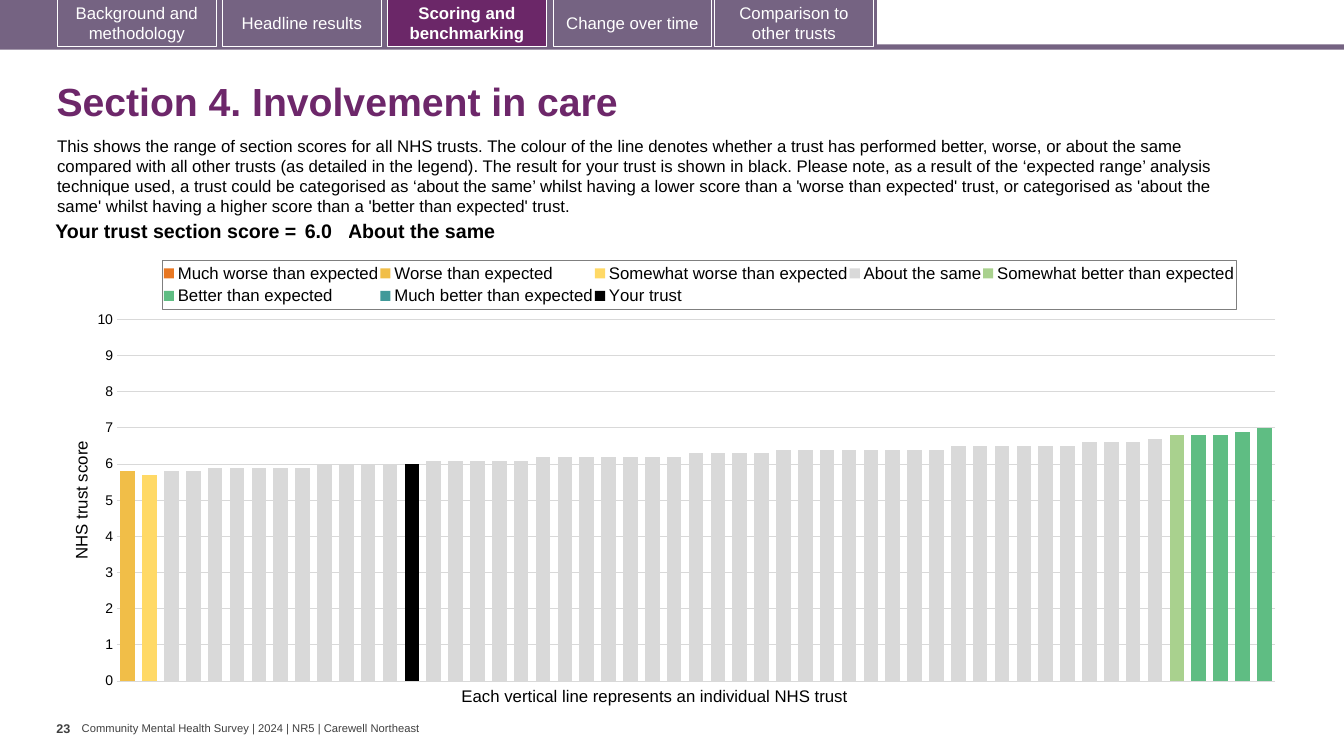
import copy

import pptx
import pptx.chart.data
import pptx.dml.color
import pptx.enum.chart
import pptx.enum.shapes
import pptx.enum.text
import pptx.oxml
import pptx.oxml.ns
import pptx.util

Cm, Pt = pptx.util.Cm, pptx.util.Pt
RGBColor = pptx.dml.color.RGBColor
Align = pptx.enum.text.PP_ALIGN
MIDDLE = pptx.enum.text.MSO_ANCHOR.MIDDLE
qn, nsdecls = pptx.oxml.ns.qn, pptx.oxml.ns.nsdecls

FONT = "Arial"
BLACK = RGBColor(0x00, 0x00, 0x00)
WHITE = RGBColor(0xFF, 0xFF, 0xFF)
DARK_GREY = RGBColor(0x40, 0x40, 0x40)
GRID_GREY = RGBColor(0xD9, 0xD9, 0xD9)
BAR_PURPLE = RGBColor(0x75, 0x63, 0x82)
ACTIVE_PURPLE = RGBColor(0x6B, 0x27, 0x68)
TITLE_PURPLE = RGBColor(0x6D, 0x27, 0x6A)

TABS = [("Background and methodology", 1.45), ("Headline results", 5.61),
        ("Scoring and benchmarking", 9.77), ("Change over time", 13.94),
        ("Comparison to other trusts", 18.01)]
ACTIVE_TAB = "Scoring and benchmarking"
INTRODUCTION = (
    "This shows the range of section scores for all NHS trusts. The colour of the line denotes whether a trust "
    "has performed better, worse, or about the same compared with all other trusts (as detailed in the legend). "
    "The result for your trust is shown in black. Please note, as a result of the ‘expected range’ analysis "
    "technique used, a trust could be categorised as ‘about the same’ whilst having a lower score than a 'worse "
    "than expected' trust, or categorised as 'about the same' whilst having a higher score than a 'better than "
    "expected' trust.")

TRUST_COUNT = 53
SAME_RUNS = [(5.8, 2), (5.9, 5), (6.0, 5), (6.1, 5), (6.2, 7),
             (6.3, 4), (6.4, 8), (6.5, 6), (6.6, 3), (6.7, 1)]
SAME_SCORES = [score for score, count in SAME_RUNS for _ in range(count)]
# Series name, colour, position of the first trust, scores
SERIES = [
    ("Much worse than expected", RGBColor(0xE8, 0x77, 0x22), 0, []),
    ("Worse than expected", RGBColor(0xF1, 0xBE, 0x48), 0, [5.8]),
    ("Somewhat worse than expected", RGBColor(0xFF, 0xD9, 0x66), 1, [5.7]),
    ("About the same", GRID_GREY, 2, SAME_SCORES),
    ("Somewhat better than expected", RGBColor(0xA9, 0xD1, 0x8E), 48, [6.8]),
    ("Better than expected", RGBColor(0x5F, 0xBD, 0x83), 49, [6.8, 6.8, 6.9, 7.0]),
    ("Much better than expected", RGBColor(0x41, 0x99, 0x99), 0, []),
    ("Your trust", BLACK, 13, [6.0]),
]


def format_font(font, size, color, bold=False):
    font.name, font.size, font.bold = FONT, Pt(size), bold
    font.color.rgb = color


def set_text(text_frame, text, size, color=BLACK, bold=False, alignment=Align.LEFT):
    text_frame.text = text
    paragraph = text_frame.paragraphs[0]
    paragraph.alignment = alignment
    format_font(paragraph.runs[0].font, size, color, bold)
    return paragraph


def add_rectangle(slide, left, top, width, height, fill):
    shape = slide.shapes.add_shape(
        pptx.enum.shapes.MSO_SHAPE.RECTANGLE, Cm(left), Cm(top), Cm(width), Cm(height))
    shape.shadow.inherit = False
    shape.fill.solid()
    shape.fill.fore_color.rgb = fill
    shape.line.fill.background()
    return shape


def add_tab(slide, label, left):
    active = label == ACTIVE_TAB
    shape = add_rectangle(slide, left, -0.03, 4, 1.2, ACTIVE_PURPLE if active else BAR_PURPLE)
    shape.line.color.rgb = WHITE
    shape.line.width = Pt(0.75)
    shape.text_frame.word_wrap = True
    shape.text_frame.vertical_anchor = MIDDLE
    set_text(shape.text_frame, label, 12, WHITE, active, Align.CENTER)


def add_text(slide, text, left, top, width, height, size, color=BLACK, bold=False, wrap=False, side=0.25, edge=0.13):
    frame = slide.shapes.add_textbox(Cm(left), Cm(top), Cm(width), Cm(height)).text_frame
    frame.word_wrap = wrap
    frame.margin_left = frame.margin_right = Cm(side)
    frame.margin_top = frame.margin_bottom = Cm(edge)
    set_text(frame, text, size, color, bold)
    return frame


def format_title(title, text):
    title.left, title.top, title.width, title.height = Cm(1.17), Cm(1.7), Cm(31.72), Cm(1.83)
    title.text_frame.vertical_anchor = MIDDLE
    set_text(title.text_frame, text, 28, TITLE_PURPLE, True).line_spacing = 0.9


def add_score_table(slide):
    # Text, column width, side margin, alignment
    columns = [("Your trust section score =", 6.68, 0.1, Align.RIGHT),
               ("6.0", 1.19, 0.1, Align.LEFT), ("About the same", 21.82, 0, Align.LEFT)]
    table = slide.shapes.add_table(1, 3, Cm(0.9), Cm(5.46), Cm(29.69), Cm(0.79)).table
    table.first_row = table.horz_banding = False
    for column, cell, (text, width, margin, alignment) in zip(table.columns, table.rows[0].cells, columns):
        column.width = Cm(width)
        cell.fill.background()
        cell.margin_left = cell.margin_right = Cm(margin)
        cell.margin_top = cell.margin_bottom = Cm(0.1)
        set_text(cell.text_frame, text, 14, BLACK, True, alignment)


def set_layout(parent, position, left, top, width, height, target=""):
    """Fix the place of a chart part, in fractions of the chart."""
    for layout in parent.findall(qn("c:layout")):
        parent.remove(layout)
    parent.insert(position, pptx.oxml.parse_xml(
        f'<c:layout {nsdecls("c")}><c:manualLayout>{target}<c:xMode val="edge"/><c:yMode val="edge"/>'
        f'<c:x val="{left}"/><c:y val="{top}"/><c:w val="{width}"/><c:h val="{height}"/>'
        '</c:manualLayout></c:layout>'))


def format_legend(chart):
    chart.has_legend = True
    legend = chart.legend
    legend.position = pptx.enum.chart.XL_LEGEND_POSITION.TOP
    legend.include_in_layout = False
    format_font(legend.font, 12, BLACK)
    set_layout(legend._element, 1, 0.077, 0.025, 0.877, 0.11)
    legend._element.find(qn("c:txPr")).addprevious(pptx.oxml.parse_xml(
        f'<c:spPr {nsdecls("c", "a")}><a:noFill/><a:ln w="9525"><a:solidFill>'
        '<a:srgbClr val="7F7F7F"/></a:solidFill></a:ln></c:spPr>'))


def format_score_axis(axis):
    axis.minimum_scale, axis.maximum_scale, axis.major_unit = 0, 10, 1
    axis.major_tick_mark = pptx.enum.chart.XL_TICK_MARK.NONE
    axis.format.line.fill.background()
    axis.major_gridlines.format.line.color.rgb = GRID_GREY
    axis.major_gridlines.format.line.width = Pt(0.75)
    format_font(axis.tick_labels.font, 10, BLACK)
    set_text(axis.axis_title.text_frame, "NHS trust score", 12, alignment=Align.CENTER)


def move_last_series_to_right_axis(plot_area):
    columns, category, value = (plot_area.find(qn(f"c:{tag}")) for tag in ("barChart", "catAx", "valAx"))
    right_columns, right_category, right_value = map(copy.deepcopy, (columns, category, value))
    columns.remove(columns.findall(qn("c:ser"))[-1])
    for series in right_columns.findall(qn("c:ser"))[:-1]:
        right_columns.remove(series)
    columns.addnext(right_columns)
    value.addnext(right_value)
    right_value.addnext(right_category)
    new_ids = {category.find(qn("c:axId")).get("val"): "50010", value.find(qn("c:axId")).get("val"): "50020"}
    for part in (right_columns, right_category, right_value):
        for element in part.findall(qn("c:axId")) + part.findall(qn("c:crossAx")):
            element.set("val", new_ids[element.get("val")])
    for tag in ("majorGridlines", "title"):
        right_value.remove(right_value.find(qn(f"c:{tag}")))
    for tag, setting in (("axPos", "r"), ("majorTickMark", "out"), ("tickLblPos", "none"), ("crosses", "max")):
        right_value.find(qn(f"c:{tag}")).set("val", setting)


def add_score_chart(slide):
    data = pptx.chart.data.CategoryChartData()
    data.categories = [str(number) for number in range(1, TRUST_COUNT + 1)]
    for name, _, start, scores in SERIES:
        data.add_series(name, [None] * start + scores + [None] * (TRUST_COUNT - start - len(scores)))
    chart = slide.shapes.add_chart(pptx.enum.chart.XL_CHART_TYPE.COLUMN_CLUSTERED,
                                   Cm(1.71), Cm(6.27), Cm(30.86), Cm(11.28), data).chart
    chart.has_title = False
    format_font(chart.font, 10, BLACK)
    plot = chart.plots[0]
    plot.gap_width, plot.overlap, plot.vary_by_categories = 50, 100, False
    for series, (_, color, _, _) in zip(plot.series, SERIES):
        series.invert_if_negative = False
        series.format.fill.solid()
        series.format.fill.fore_color.rgb = color
    chart.category_axis.visible = False
    format_score_axis(chart.value_axis)
    format_legend(chart)
    plot_area = chart._chartSpace.chart.plotArea
    set_layout(plot_area, 0, 0.04, 0.158, 0.946, 0.808, '<c:layoutTarget val="inner"/>')
    move_last_series_to_right_axis(plot_area)


def main():
    presentation = pptx.Presentation()
    presentation.slide_width, presentation.slide_height = Cm(33.87), Cm(19.05)
    slide = presentation.slides.add_slide(presentation.slide_layouts[5])
    # Navigation bar
    add_rectangle(slide, 0, 1.12, 33.87, 0.13, BAR_PURPLE)
    add_rectangle(slide, 0, 0, 22.1, 1.19, BAR_PURPLE)
    for label, left in TABS:
        add_tab(slide, label, left)
    # Heading and introduction
    format_title(slide.shapes.title, "Section 4. Involvement in care")
    add_text(slide, INTRODUCTION, 1.19, 3.28, 30.81, 2.31, 12, wrap=True)
    # Scores
    add_score_chart(slide)
    add_score_table(slide)
    add_text(slide, "Each vertical line represents an individual NHS trust", 11.38, 17.15, 10.44, 0.76, 12)
    # Footer
    add_text(slide, "23", 1.42, 18.03, 0.64, 1.02, 9, DARK_GREY, bold=True, side=0)
    footer = add_text(slide, "Community Mental Health Survey | 2024 | NR5 | Carewell Northeast",
                      2.06, 18.19, 8.61, 0.33, 8, DARK_GREY, side=0, edge=0)
    footer.vertical_anchor = MIDDLE
    presentation.save("out.pptx")


if __name__ == "__main__":
    main()
